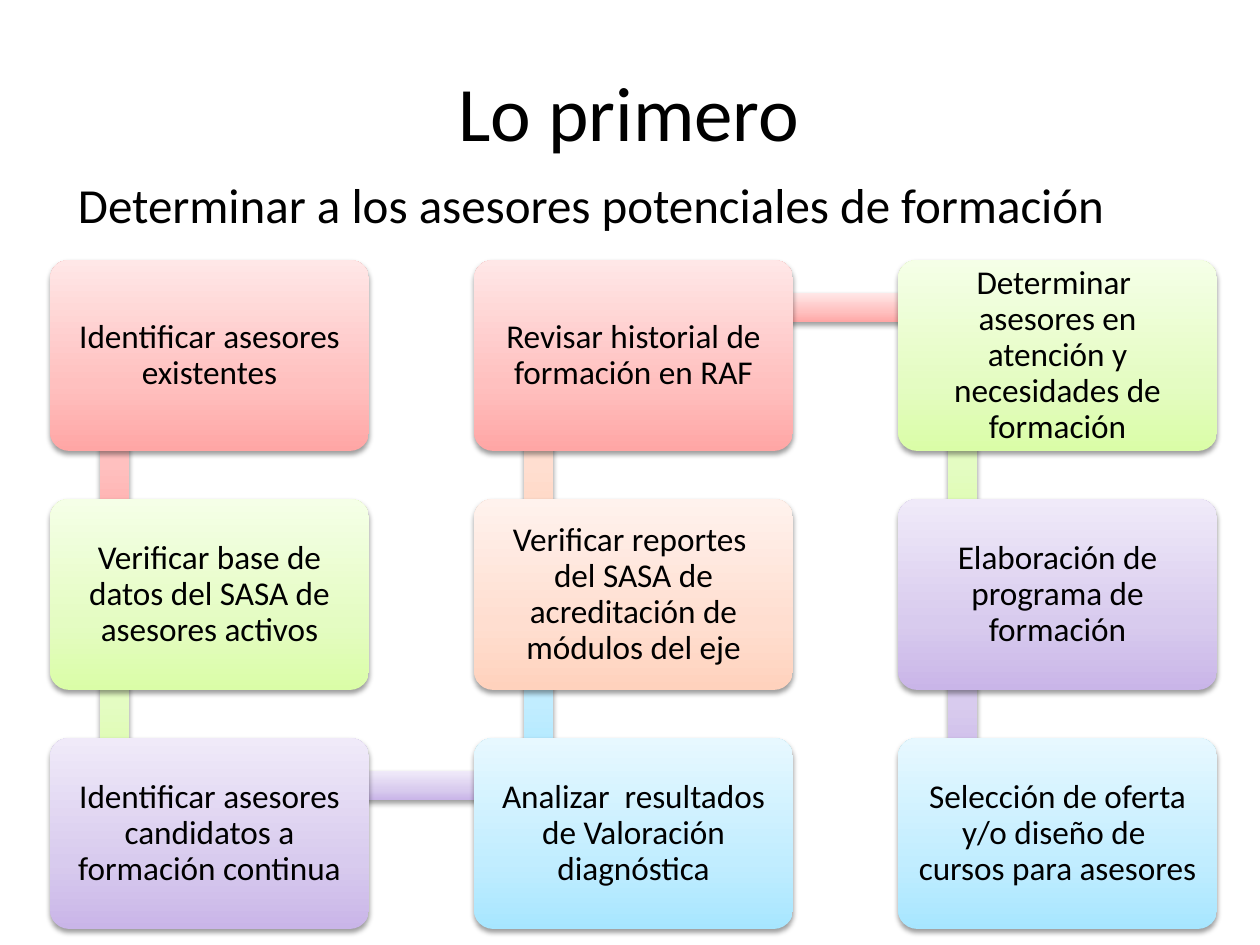
from copy import deepcopy
from itertools import cycle

from lxml import etree
from pptx import Presentation
from pptx.dml.color import RGBColor
from pptx.enum.shapes import MSO_SHAPE as Shape
from pptx.enum.text import MSO_ANCHOR as Anchor, PP_ALIGN as Align
from pptx.oxml import parse_xml
from pptx.oxml.ns import nsdecls, qn
from pptx.util import Emu, Pt

SCALE = 914400 / 126  # EMU per px

SHADOW = (
    f'<a:outerShdw {nsdecls("a")} blurRad="40000" dist="20000" dir="5400000" rotWithShape="0">'
    '<a:srgbClr val="000000"><a:alpha val="38000"/></a:srgbClr></a:outerShdw>'
)


def add_block(kind, box, shades):
    """Add a borderless shape with a bottom-to-top gradient and a soft shadow."""
    block = slide.shapes.add_shape(kind, *(Emu(round(v * SCALE)) for v in box))
    block.line.fill.background()
    block.fill.gradient()
    block.fill.gradient_angle = 90
    stop_list = block._element.spPr.find(qn("a:gradFill")).find(qn("a:gsLst"))
    stop_list.insert(1, deepcopy(stop_list[0]))
    for stop, position, shade in zip(block.fill.gradient_stops, (0, 0.35, 1), shades):
        stop.position = position
        stop.color.rgb = RGBColor.from_string(shade)
    block.shadow.inherit = False
    block._element.spPr.find(qn("a:effectLst")).append(parse_xml(SHADOW))
    return block


def write(frame, text, size, margins, paragraph_format):
    """Fill a text frame with one black Calibri paragraph."""
    for side, margin in zip(("left", "top", "right", "bottom"), margins):
        setattr(frame, f"margin_{side}", Emu(round(margin * SCALE)))
    paragraph = frame.paragraphs[0]
    paragraph.text = text
    for name, value in paragraph_format.items():
        setattr(paragraph, name, value)
    for name, value in {"name": "Calibri", "size": Pt(size)}.items():
        setattr(paragraph.font, name, value)
    paragraph.font.color.rgb = RGBColor.from_string("000000")


deck = Presentation()
deck.slide_width, deck.slide_height = Emu(round(1260 * SCALE)), Emu(round(945 * SCALE))
slide = deck.slides.add_slide(deck.slide_layouts[6])

# Process steps, in reading order along the snake
steps = [
    "Identificar asesores existentes",
    "Verificar base de datos del SASA de asesores activos",
    "Identificar asesores candidatos a formación continua",
    "Analizar  resultados de Valoración diagnóstica",
    "Verificar reportes  del SASA de acreditación de módulos del eje",
    "Revisar historial de formación en RAF",
    "Determinar  asesores en atención y necesidades de formación",
    "Elaboración de programa de formación",
    "Selección de oferta y/o diseño de  cursos para asesores",
]
palette = [
    ("FFA6A5", "FFC0BF", "FFE7E7"),
    ("DAFDA7", "E4FCC2", "F5FFE7"),
    ("C9B5E8", "D8CBEE", "F0EAF9"),
    ("A7E6FF", "C1EDFF", "E7F8FF"),
    ("FFD2BD", "FFDED0", "FFF2ED"),
]
ROWS = 3
LEFT, TOP, COLUMN_STEP, ROW_STEP = 50, 260, 424, 239
CARD_WIDTH, CARD_HEIGHT, BAR = 319, 191, 29

# Snake grid: down the even columns, up the odd ones
spots = []
for index in range(len(steps)):
    column, row = divmod(index, ROWS)
    if column % 2:
        row = ROWS - 1 - row
    spots.append((LEFT + column * COLUMN_STEP, TOP + row * ROW_STEP))

# Bars linking each step to the next, behind the cards
for (x, y), (next_x, next_y), shades in zip(spots, spots[1:], cycle(palette)):
    if x == next_x:
        box = (x + 50, min(y, next_y) + 48, BAR, ROW_STEP)
    else:
        box = (x + 66, y + 33, COLUMN_STEP, BAR)
    add_block(Shape.RECTANGLE, box, shades)

# Step cards
for (x, y), step, shades in zip(spots, steps, cycle(palette)):
    card = add_block(Shape.ROUNDED_RECTANGLE, (x, y, CARD_WIDTH, CARD_HEIGHT), shades)
    card.adjustments[0] = 0.1
    card.text_frame.word_wrap = True
    card.text_frame.vertical_anchor = Anchor.MIDDLE
    write(card.text_frame, step, 19, (15, 15, 15, 15),
          {"alignment": Align.CENTER, "line_spacing": 0.9})

# Headings
headings = [
    ("Determinar a los asesores potenciales de formación", 28, (65, 168, 1140, 72), Align.LEFT),
    ("Lo primero", 44, (445, 59, 372, 106), Align.LEFT),
]
for text, size, box, alignment in headings:
    heading = slide.shapes.add_textbox(*(Emu(round(v * SCALE)) for v in box))
    heading.text_frame.word_wrap = True
    write(heading.text_frame, text, size, (13, 6, 13, 6), {"alignment": alignment})

deck.save("out.pptx")
